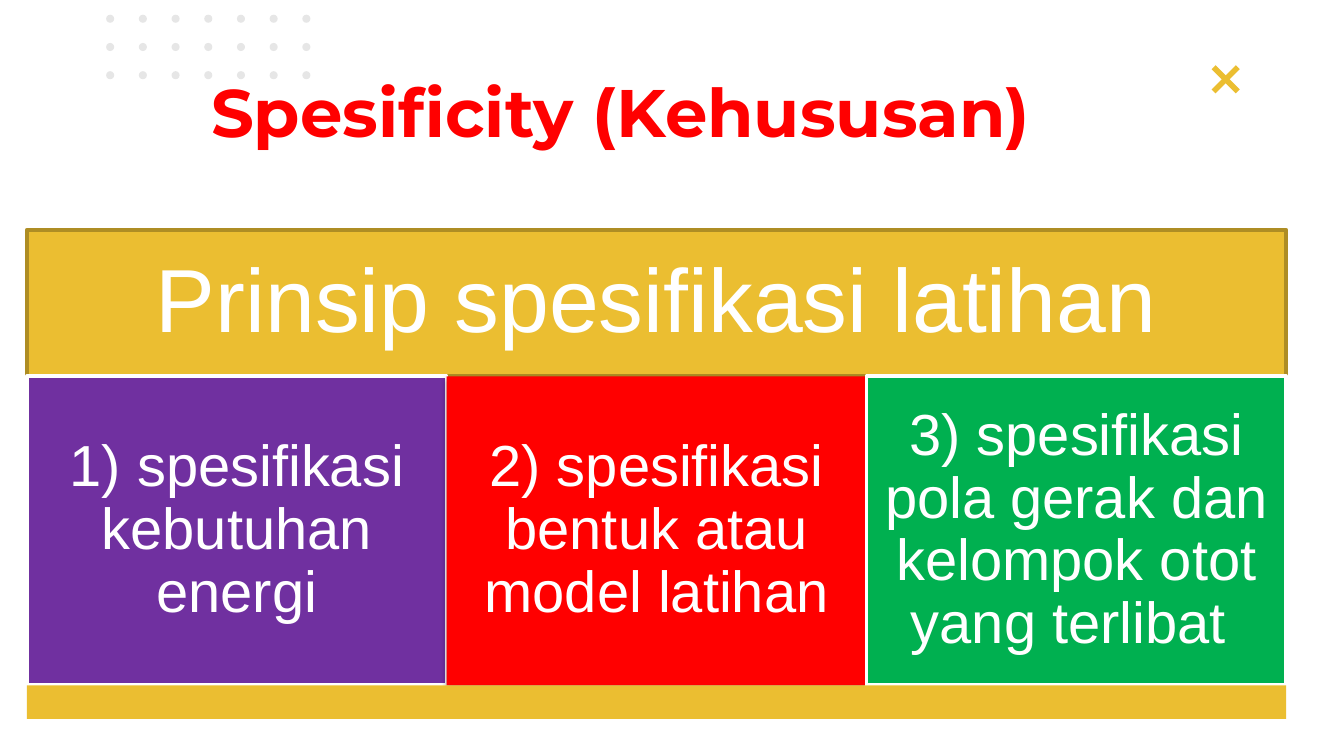
from dataclasses import dataclass
from itertools import product
from typing import Optional

from lxml.etree import SubElement
from pptx import Presentation
from pptx.dml.color import RGBColor
from pptx.enum.shapes import MSO_CONNECTOR, MSO_SHAPE
from pptx.enum.text import MSO_ANCHOR, PP_ALIGN
from pptx.oxml.ns import qn
from pptx.util import Inches, Pt

WHITE = RGBColor(0xFF, 0xFF, 0xFF)
GOLD = RGBColor(0xEB, 0xBE, 0x31)
DARK_GOLD = RGBColor(0xAE, 0x8D, 0x24)
PURPLE = RGBColor(0x70, 0x30, 0xA0)
RED = RGBColor(0xFF, 0x00, 0x00)
GREEN = RGBColor(0x00, 0xB0, 0x50)
DOT_GRAY = RGBColor(0xE6, 0xE6, 0xE6)

PAGE_WIDTH = Inches(10)
PAGE_HEIGHT = PAGE_WIDTH * 9 // 16

LEFT, WIDTH = 0.2, 9.37
HEADER_TOP, PANEL_TOP, FOOTER_TOP, BOTTOM = 1.71, 2.8, 5.1, 5.35
DOT_COLUMNS, DOT_ROWS, DOT_SIZE = 7, 3, 0.06
DOT_LEFT, DOT_RIGHT, DOT_TOP, DOT_BOTTOM = 0.79, 2.25, 0.11, 0.53


@dataclass
class Panel:
    text: str
    fill: RGBColor
    line: Optional[RGBColor] = WHITE
    shadow: bool = False


PANELS = [
    Panel("1) spesifikasi kebutuhan energi", PURPLE),
    Panel("2) spesifikasi bentuk atau model latihan", RED, line=None, shadow=True),
    Panel("3) spesifikasi pola gerak dan kelompok otot yang terlibat ", GREEN),
]


def add_block(page, left: float, top: float, width: float, height: float,
              fill: RGBColor, line: Optional[RGBColor] = None,
              kind: MSO_SHAPE = MSO_SHAPE.RECTANGLE):
    box = page.shapes.add_shape(
        kind, Inches(left), Inches(top), Inches(width), Inches(height))
    box.shadow.inherit = False
    box.fill.solid()
    box.fill.fore_color.rgb = fill
    if line is None:
        box.line.fill.background()
    else:
        box.line.color.rgb = line
        box.line.width = Pt(2)
    return box


def write(box, text: str, *, size: float, color: RGBColor = WHITE,
          font: str = "Arial", bold: bool = False, inset: float = 0.1,
          align: PP_ALIGN = PP_ALIGN.CENTER, spacing: float = 0.9,
          anchor: MSO_ANCHOR = MSO_ANCHOR.MIDDLE) -> None:
    frame = box.text_frame
    frame.word_wrap = True
    frame.vertical_anchor = anchor
    frame.margin_left = frame.margin_right = Inches(inset)
    frame.margin_top = frame.margin_bottom = Inches(inset)
    para = frame.paragraphs[0]
    para.alignment = align
    para.line_spacing = spacing
    para.space_before = Pt(0)
    span = para.add_run()
    span.text = text
    span.font.name = font
    span.font.size = Pt(size)
    span.font.bold = bold
    span.font.color.rgb = color


def add_drop_shadow(box) -> None:
    effects = box._element.spPr.find(qn("a:effectLst"))
    shadow = SubElement(effects, qn("a:outerShdw"), blurRad=str(Pt(3.1)),
                        dist=str(Pt(1.8)), dir="5400000", rotWithShape="0")
    color = SubElement(shadow, qn("a:srgbClr"), val="000000")
    SubElement(color, qn("a:alpha"), val="35000")


def add_dots(page) -> None:
    column_step = (DOT_RIGHT - DOT_LEFT) / (DOT_COLUMNS - 1)
    row_step = (DOT_BOTTOM - DOT_TOP) / (DOT_ROWS - 1)
    for row, column in product(range(DOT_ROWS), range(DOT_COLUMNS)):
        add_block(page, DOT_LEFT + column * column_step, DOT_TOP + row * row_step,
                  DOT_SIZE, DOT_SIZE, DOT_GRAY, kind=MSO_SHAPE.OVAL)


def add_cross(page, left: float, top: float, size: float) -> None:
    for start, end in ((top, top + size), (top + size, top)):
        stroke = page.shapes.add_connector(
            MSO_CONNECTOR.STRAIGHT, Inches(left), Inches(start),
            Inches(left + size), Inches(end))
        stroke.line.color.rgb = GOLD
        stroke.line.width = Pt(3)
        SubElement(stroke._element.spPr, qn("a:effectLst"))


def add_title(page) -> None:
    title = page.shapes.title
    title.left, title.top = Inches(1.47), Inches(0.38)
    title.width, title.height = Inches(6.85), Inches(0.84)
    write(title, "Spesificity (Kehususan)", size=36, color=RED,
          font="Montserrat", bold=True, align=PP_ALIGN.LEFT, spacing=1.0,
          anchor=MSO_ANCHOR.BOTTOM)


def add_principles(page) -> None:
    header = add_block(page, LEFT, HEADER_TOP, WIDTH, PANEL_TOP - HEADER_TOP,
                       GOLD, DARK_GOLD)
    write(header, "Prinsip spesifikasi latihan", size=48, inset=0.2)
    column_width = WIDTH / len(PANELS)
    for column, panel in enumerate(PANELS):
        box = add_block(page, LEFT + column * column_width, PANEL_TOP,
                        column_width, FOOTER_TOP - PANEL_TOP,
                        panel.fill, panel.line)
        if panel.shadow:
            add_drop_shadow(box)
        write(box, panel.text, size=31, inset=0.13)
    add_block(page, LEFT, FOOTER_TOP, WIDTH, BOTTOM - FOOTER_TOP, GOLD)


def main() -> None:
    deck = Presentation()
    deck.slide_width, deck.slide_height = PAGE_WIDTH, PAGE_HEIGHT
    page = deck.slides.add_slide(deck.slide_layouts.get_by_name("Title Only"))
    add_dots(page)
    add_cross(page, 9.03, 0.5, 0.18)
    add_title(page)
    add_principles(page)
    deck.save("out.pptx")


if __name__ == "__main__":
    main()
